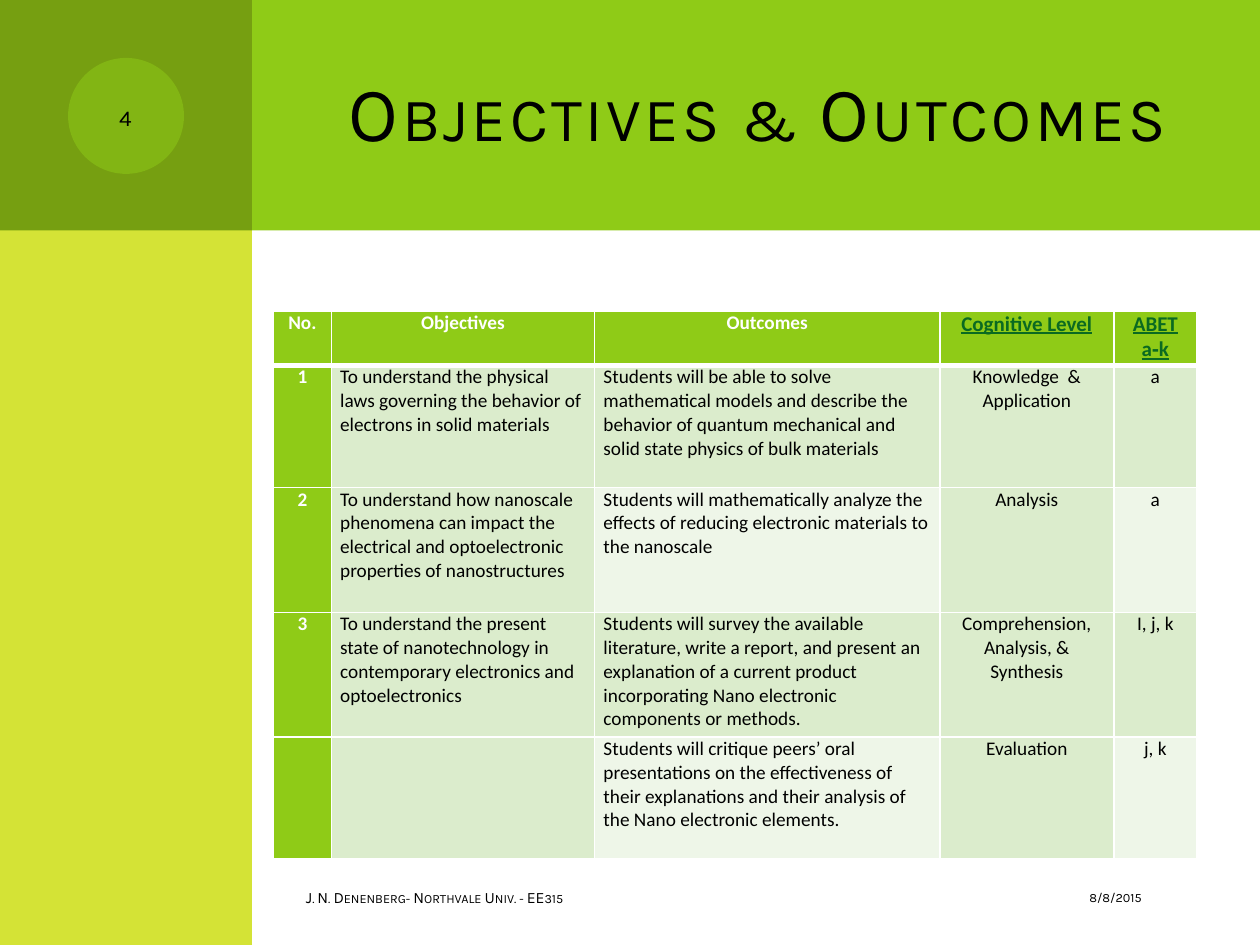
"""Build the Objectives & Outcomes course slide."""
from lxml import etree
from pptx import Presentation
from pptx import util as u
from pptx.dml.color import RGBColor
from pptx.enum import shapes, text
from pptx.oxml.ns import qn

COLORS = {
    "green": "8FCB17", "lime": "D4E336", "olive": "769F11",
    "band": "DBECCC", "pale": "EEF6E8", "link": "0A6A21",
    "white": "FFFFFF", "black": "000000",
}
LEFT, CENTER, RIGHT = text.PP_ALIGN.LEFT, text.PP_ALIGN.CENTER, text.PP_ALIGN.RIGHT
COL_WIDTHS = [0.46, 2.09, 2.74, 1.38, 0.66]
ROW_HEIGHTS = [0.43, 0.97, 0.99, 0.99, 0.97]
ROWS = [
    ["No.", "Objectives", "Outcomes", "Cognitive Level", "ABET a‑k"],
    ["1",
     "To understand the physical laws governing the behavior of electrons in solid materials",
     "Students will be able to solve mathematical models and describe the behavior of "
     "quantum mechanical and solid state physics of bulk materials",
     "Knowledge  & Application", "a"],
    ["2",
     "To understand how nanoscale phenomena can impact the electrical and optoelectronic "
     "properties of nanostructures",
     "Students will mathematically analyze the effects of reducing electronic materials "
     "to the nanoscale",
     "Analysis", "a"],
    ["3",
     "To understand the present state of nanotechnology in contemporary electronics and "
     "optoelectronics",
     "Students will survey the available literature, write a report, and present an "
     "explanation of a current product incorporating Nano electronic components or methods.",
     "Comprehension, Analysis, & Synthesis", "I, j, k"],
    ["", "",
     "Students will critique peers’ oral presentations on the effectiveness of their "
     "explanations and their analysis of the Nano electronic elements.",
     "Evaluation", "j, k"],
]


def rgb(name):
    """Return the named colour."""
    return RGBColor.from_string(COLORS[name])


def add_block(s, kind, box, color, alpha=None):
    """Add a borderless filled shape, optionally transparent."""
    sp = s.shapes.add_shape(kind, *map(u.Inches, box))
    sp.shadow.inherit = False
    sp.fill.solid()
    sp.fill.fore_color.rgb = rgb(color)
    sp.line.fill.background()
    if alpha is not None:
        clr = next(sp._element.spPr.iter(qn("a:srgbClr")))
        etree.SubElement(clr, qn("a:alpha"), val=str(alpha * 1000))


def style_run(r, font, size, color):
    """Set the font, size and colour of a run."""
    r.font.name = font
    r.font.size = u.Pt(size)
    r.font.color.rgb = rgb(color)


def add_label(s, box, content, size, align, spacing=0):
    """Add a vertically centred text box in small capitals."""
    tf = s.shapes.add_textbox(*map(u.Inches, box)).text_frame
    tf.word_wrap = True
    tf.vertical_anchor = text.MSO_ANCHOR.MIDDLE
    tf.text = content
    p = tf.paragraphs[0]
    p.alignment = align
    r = p.runs[0]
    style_run(r, "Karla", size, "black")
    rpr = r._r.get_or_add_rPr()
    rpr.set("cap", "small")
    if spacing:
        rpr.set("spc", str(spacing * 100))


def set_borders(cell, top, bottom):
    """Draw white cell borders with the given top and bottom widths."""
    tcpr = cell._tc.get_or_add_tcPr()
    for side, width in zip("LRTB", (1, 1, top, bottom)):
        ln = etree.SubElement(tcpr, qn(f"a:ln{side}"), w=str(u.Pt(width)))
        fill = etree.SubElement(ln, qn("a:solidFill"))
        etree.SubElement(fill, qn("a:srgbClr"), val=COLORS["white"])


def cell_color(row, col):
    """Return the fill name for a table position."""
    if row == 0 or col == 0:
        return "green"
    return "pale" if row % 2 == 0 and col in (2, 4) else "band"


def fill_cell(cell, row, col, content):
    """Style one table cell and write its text."""
    set_borders(cell, 3 if row == 1 else 1, 3 if row == 0 else 1)
    cell.fill.solid()
    cell.fill.fore_color.rgb = rgb(cell_color(row, col))
    cell.margin_left = cell.margin_right = u.Inches(0.07)
    cell.margin_top = cell.margin_bottom = 0
    if not content:
        return
    cell.text = content
    p = cell.text_frame.paragraphs[0]
    p.alignment = LEFT if row and col in (1, 2) else CENTER
    r = p.runs[0]
    heading = row == 0 or col == 0
    style_run(r, "Calibri", 11, "white" if heading else "black")
    r.font.bold = heading
    if row == 0 and col > 2:
        style_run(r, "Calibri", 12, "link")
        r.font.underline = True
        p.space_before = p.space_after = u.Pt(1)


def add_outcomes_table(s):
    """Add the table of objectives and outcomes."""
    box = (2.17, 2.47, sum(COL_WIDTHS), sum(ROW_HEIGHTS))
    table = s.shapes.add_table(len(ROWS), len(COL_WIDTHS), *map(u.Inches, box)).table
    for column, width in zip(table.columns, COL_WIDTHS):
        column.width = u.Inches(width)
    for i, (height, values) in enumerate(zip(ROW_HEIGHTS, ROWS)):
        table.rows[i].height = u.Inches(height)
        for j, value in enumerate(values):
            fill_cell(table.cell(i, j), i, j, value)


def main():
    """Build and save the slide."""
    prs = Presentation()
    prs.slide_width, prs.slide_height = u.Inches(10), u.Inches(7.5)
    s = prs.slides.add_slide(prs.slide_layouts[6])
    rect, oval = shapes.MSO_SHAPE.RECTANGLE, shapes.MSO_SHAPE.OVAL
    add_block(s, rect, (0.5, 0, 9.5, 1.83), "green")
    add_block(s, rect, (0, 0, 2, 7.5), "lime")
    add_block(s, rect, (0, 0, 2, 1.83), "olive")
    add_block(s, oval, (0.54, 0.46, 0.92, 0.92), "green", alpha=50)
    add_label(s, (2.67, 0.25, 6.83, 1.25), "Objectives & Outcomes", 44, RIGHT, spacing=2)
    add_label(s, (0.58, 0.58, 0.83, 0.67), "4", 16, CENTER)
    add_outcomes_table(s)
    add_label(s, (6.83, 6.91, 2.33, 0.4), "8/8/2015", 9, RIGHT)
    add_label(s, (2.33, 6.92, 3.17, 0.4), "J. N. Denenberg- Northvale Univ. - EE315", 9, LEFT)
    prs.save("out.pptx")


if __name__ == "__main__":
    main()
